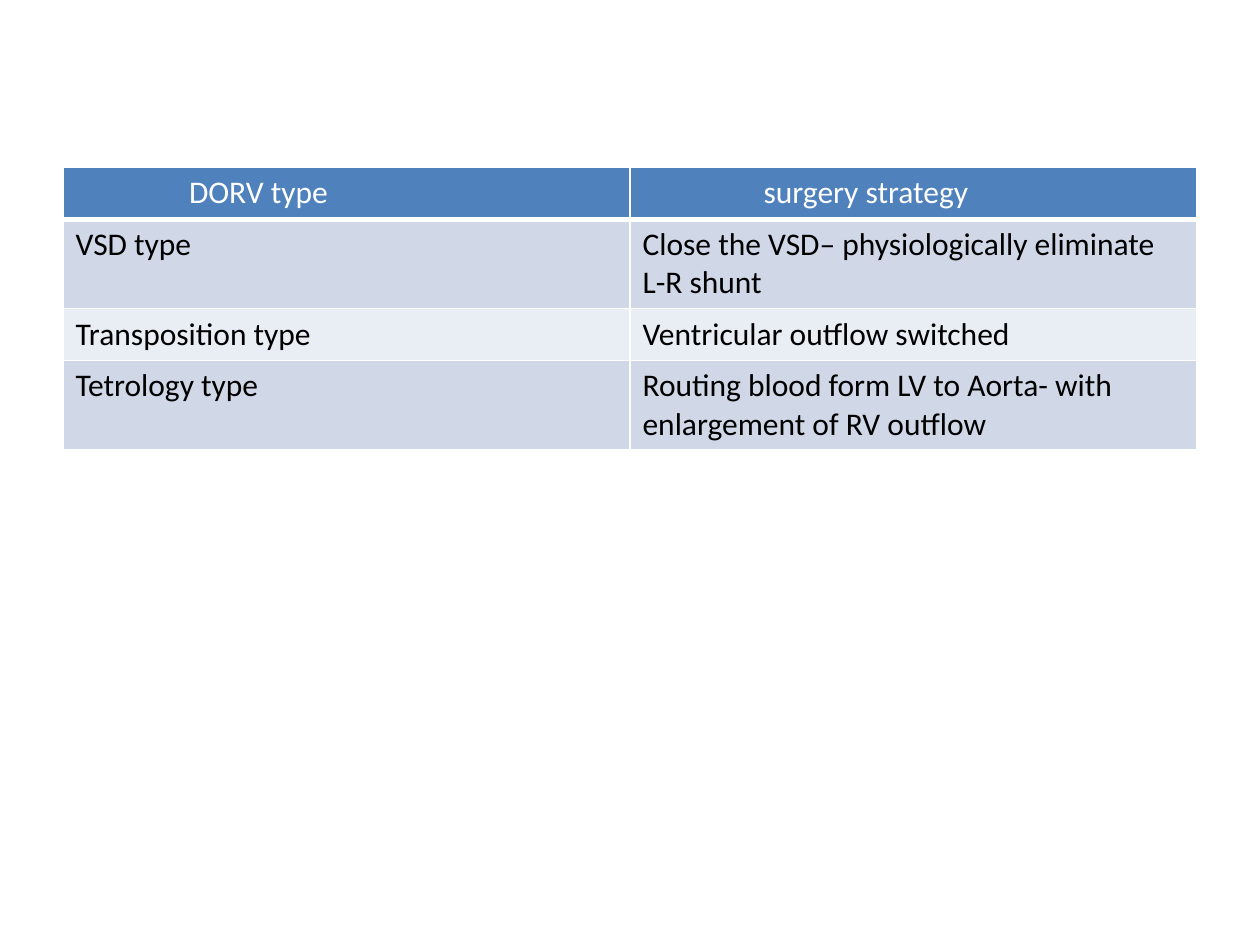
import dataclasses

import lxml.etree
import pptx
import pptx.dml.color
import pptx.oxml.ns
import pptx.util


@dataclasses.dataclass(frozen=True)
class Theme:
    font: str = "Calibri"
    size: int = 18
    head: str = "4F81BD"
    bands: tuple = ("D0D8E8", "E9EDF4")
    light: str = "FFFFFF"
    dark: str = "000000"
    thin: int = 1
    thick: int = 3


theme = Theme()
rgb = pptx.dml.color.RGBColor.from_string


def edge(cell, side, width):
    """Draw one border of a cell; call before the cell is filled."""
    name = pptx.oxml.ns.qn
    props = cell._tc.get_or_add_tcPr()
    line = lxml.etree.SubElement(props, name("a:ln" + side), w=str(pptx.util.Pt(width)))
    fill = lxml.etree.SubElement(line, name("a:solidFill"))
    lxml.etree.SubElement(fill, name("a:srgbClr"), val=theme.light)


deck = pptx.Presentation()
deck.slide_width = pptx.util.Inches(10)
deck.slide_height = pptx.util.Inches(7.5)
slide = deck.slides.add_slide(deck.slide_layouts[6])

rows = [
    ("DORV type", "surgery strategy"),
    ("VSD type", "Close the VSD– physiologically eliminate L-R shunt"),
    ("Transposition type", "Ventricular outflow switched"),
    ("Tetrology type", "Routing blood form LV to Aorta- with enlargement of RV outflow"),
]
indents = (1, 1.06)  # left margins of the two headings, in inches

left = int(deck.slide_width * 0.05)
width = deck.slide_width - 2 * left
top = pptx.util.Inches(1.33)
height = pptx.util.Inches(0.41) * len(rows)
table = slide.shapes.add_table(len(rows), 2, left, top, width, height).table
table.first_row = False
table.horz_banding = False

for r, row in enumerate(rows):
    for c, text in enumerate(row):
        cell = table.cell(r, c)
        for side in "LRTB":
            edge(cell, side, theme.thick if r == 0 and side == "B" else theme.thin)
        cell.fill.solid()
        cell.fill.fore_color.rgb = rgb(theme.bands[(r - 1) % 2] if r else theme.head)
        if r == 0:
            cell.margin_left = pptx.util.Inches(indents[c])
        run = cell.text_frame.paragraphs[0].add_run()
        run.text = text
        run.font.name = theme.font
        run.font.size = pptx.util.Pt(theme.size)
        run.font.bold = False
        run.font.color.rgb = rgb(theme.dark if r else theme.light)

deck.save("out.pptx")
